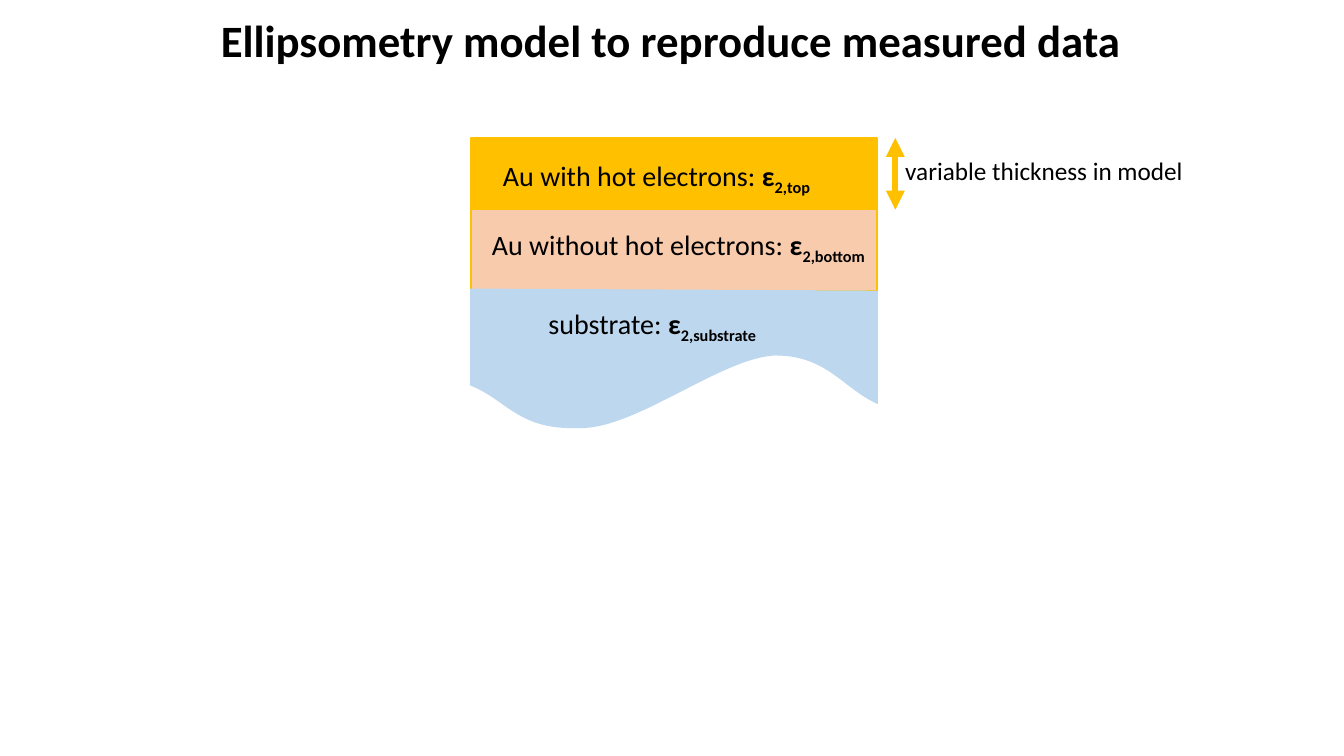
from dataclasses import dataclass

from pptx import Presentation
from pptx.dml.color import RGBColor
from pptx.enum.shapes import MSO_CONNECTOR, MSO_SHAPE
from pptx.enum.text import MSO_ANCHOR, PP_ALIGN
from pptx.oxml.ns import qn
from pptx.util import Inches, Pt
from lxml.etree import SubElement


@dataclass(frozen=True)
class Theme:
    font: str = "Calibri"
    text: str = "000000"
    hot_gold: str = "FFC000"
    cold_gold: str = "F8CBAD"
    substrate: str = "BDD7EE"
    title_size: int = 32
    label_size: int = 20
    note_size: int = 18
    outline: float = 1
    arrow: float = 4.5


THEME = Theme()
STACK_LEFT, STACK_WIDTH = 4.67, 4.03
STACK_RIGHT = STACK_LEFT + STACK_WIDTH
HOT_TOP, COLD_TOP, SUBSTRATE_TOP = 1.37, 2.08, 2.87
ARROW_X = 8.88
LABEL_WIDTH = 4.58
CURVE_STEPS = 24

# Left, top, wording, subscript of the permittivity
LABELS = [
    (4.89, 1.52, "Au with hot electrons: ", "2,top"),
    (4.78, 2.21, "Au without hot electrons: ", "2,bottom"),
    (5.34, 2.99, "substrate: ", "2,substrate"),
]
# Wavy lower edge of the substrate: two controls and an end per curve
WAVE_START = (STACK_LEFT, 3.82)
WAVE = [
    ((5.03, 3.96), (5.14, 4.26), (5.73, 4.24)),
    ((6.28, 4.27), (7.15, 3.54), (7.69, 3.52)),
    ((8.2, 3.52), (8.36, 3.84), (STACK_RIGHT, 4)),
]


def apply_format(target, values):
    for name, value in values.items():
        setattr(target, name, value)


def add_span(para, text, size, bold=False, subscript=False):
    span = para.add_run()
    span.text = text
    apply_format(span.font, {"name": THEME.font, "size": Pt(size), "bold": bold})
    span.font.color.rgb = RGBColor.from_string(THEME.text)
    if subscript:
        span.font._element.set("baseline", "-25000")


def paint(shape, fill, outline):
    shape.shadow.inherit = False
    shape.fill.solid()
    shape.fill.fore_color.rgb = RGBColor.from_string(fill)
    shape.line.color.rgb = RGBColor.from_string(outline)
    shape.line.width = Pt(THEME.outline)


def add_title(page, text):
    title = page.shapes.title
    apply_format(title, {"left": Inches(0.84), "top": Inches(0.12),
                         "width": Inches(11.63), "height": Inches(0.6)})
    apply_format(title.text_frame, {"vertical_anchor": MSO_ANCHOR.MIDDLE,
                                    "word_wrap": True})
    para = title.text_frame.paragraphs[0]
    apply_format(para, {"alignment": PP_ALIGN.CENTER, "line_spacing": Pt(35)})
    add_span(para, text, THEME.title_size, bold=True)


def add_layer(page, top, height, fill):
    layer = page.shapes.add_shape(
        MSO_SHAPE.RECTANGLE, Inches(STACK_LEFT), Inches(top),
        Inches(STACK_WIDTH), Inches(height))
    paint(layer, fill, THEME.hot_gold)


def curve_points(start, first, second, end):
    for step in range(1, CURVE_STEPS + 1):
        t = step / CURVE_STEPS
        weights = ((1 - t) ** 3, 3 * t * (1 - t) ** 2, 3 * t * t * (1 - t), t ** 3)
        yield tuple(
            Inches(sum(w * value for w, value in zip(weights, axis)))
            for axis in zip(start, first, second, end))


def add_substrate(page):
    points = [tuple(map(Inches, WAVE_START))]
    start = WAVE_START
    for first, second, end in WAVE:
        points.extend(curve_points(start, first, second, end))
        start = end
    points.append((Inches(STACK_RIGHT), Inches(2.89)))
    builder = page.shapes.build_freeform(Inches(STACK_LEFT), Inches(SUBSTRATE_TOP))
    builder.add_line_segments(points, close=True)
    paint(builder.convert_to_shape(), THEME.substrate, THEME.substrate)


def add_text(page, left, top, width, height):
    box = page.shapes.add_textbox(
        Inches(left), Inches(top), Inches(width), Inches(height))
    box.text_frame.word_wrap = True
    return box.text_frame.paragraphs[0]


def add_layer_label(page, left, top, wording, subscript):
    para = add_text(page, left, top, LABEL_WIDTH, 0.44)
    add_span(para, wording, THEME.label_size)
    add_span(para, "ε", THEME.label_size, bold=True)
    add_span(para, subscript, THEME.label_size, bold=True, subscript=True)


def add_thickness_arrow(page):
    arrow = page.shapes.add_connector(
        MSO_CONNECTOR.STRAIGHT, Inches(ARROW_X), Inches(HOT_TOP),
        Inches(ARROW_X), Inches(COLD_TOP))
    arrow.line.color.rgb = RGBColor.from_string(THEME.hot_gold)
    arrow.line.width = Pt(THEME.arrow)
    line = arrow.line._get_or_add_ln()
    for end in ("a:headEnd", "a:tailEnd"):
        SubElement(line, qn(end), type="triangle")
    SubElement(arrow._element.spPr, qn("a:effectLst"))


def main():
    deck = Presentation()
    apply_format(deck, {"slide_width": Inches(13.33), "slide_height": Inches(7.5)})
    page = deck.slides.add_slide(deck.slide_layouts[5])
    add_title(page, "Ellipsometry model to reproduce measured data")

    # Layer stack, back to front
    add_layer(page, COLD_TOP, 0.8, THEME.cold_gold)
    add_substrate(page)
    add_layer(page, HOT_TOP, COLD_TOP - HOT_TOP, THEME.hot_gold)
    for label in LABELS:
        add_layer_label(page, *label)

    # Thickness note
    add_thickness_arrow(page)
    note = add_text(page, 8.88, 1.49, 4.25, 0.4)
    add_span(note, "variable thickness in model", THEME.note_size)

    deck.save("out.pptx")


if __name__ == "__main__":
    main()
